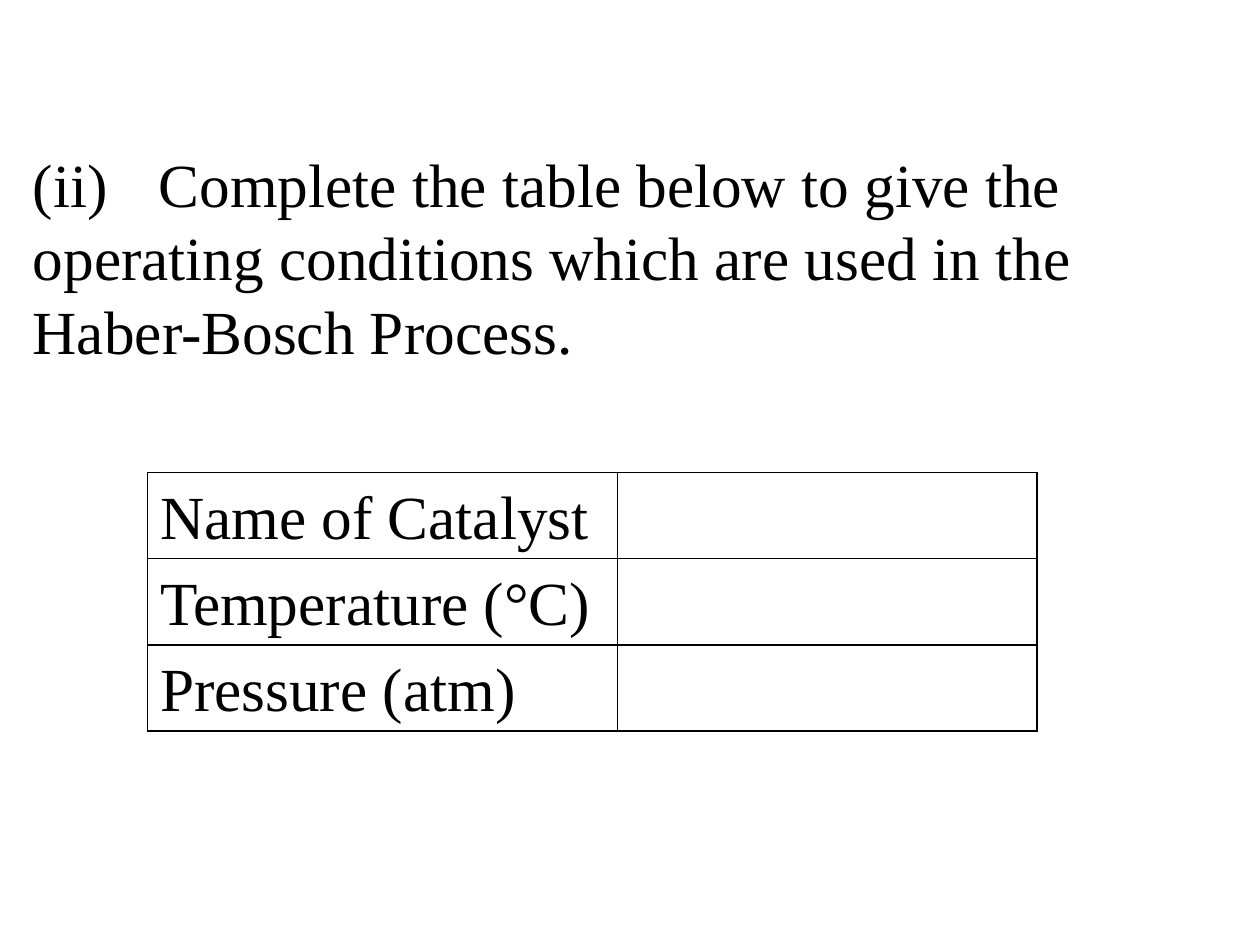
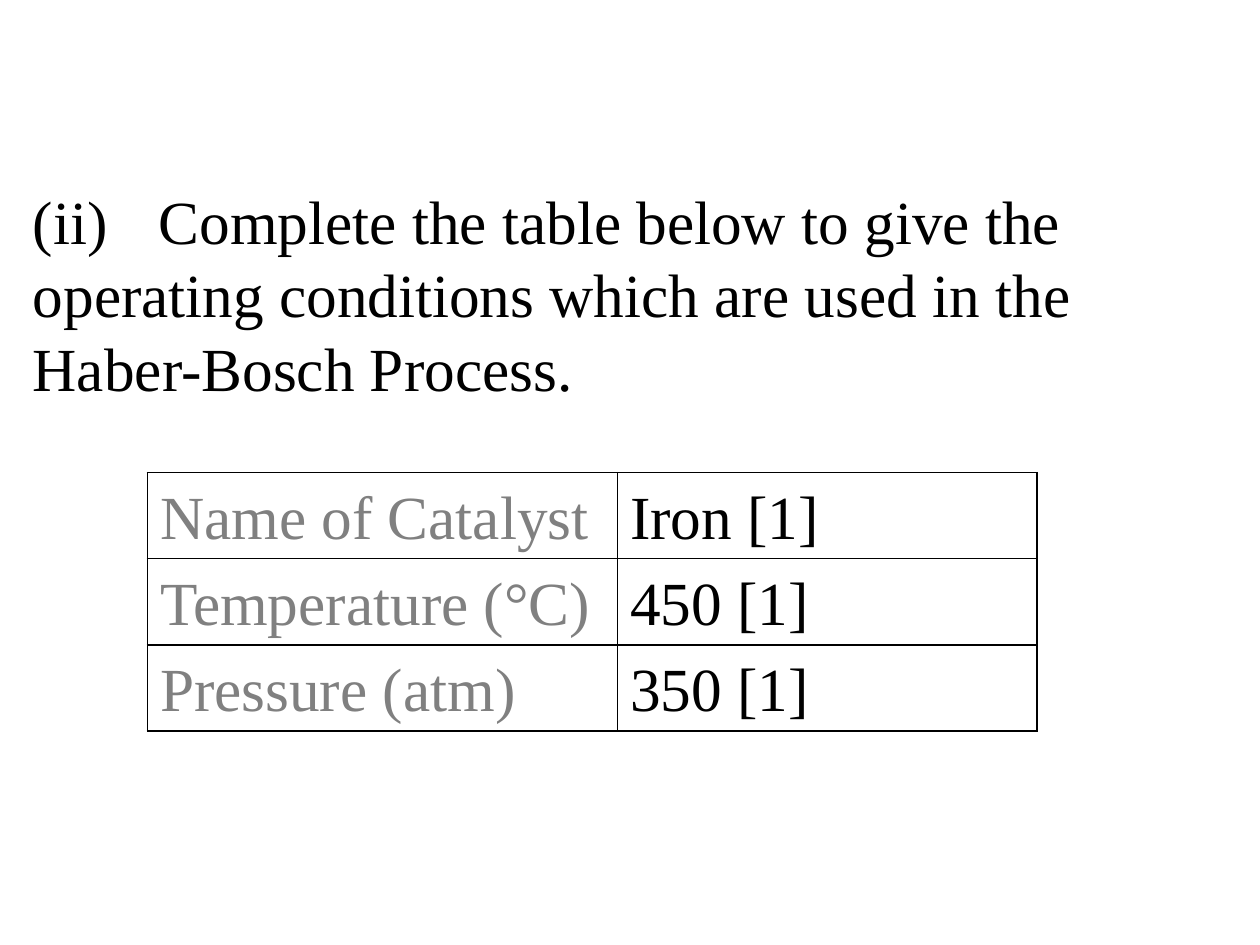
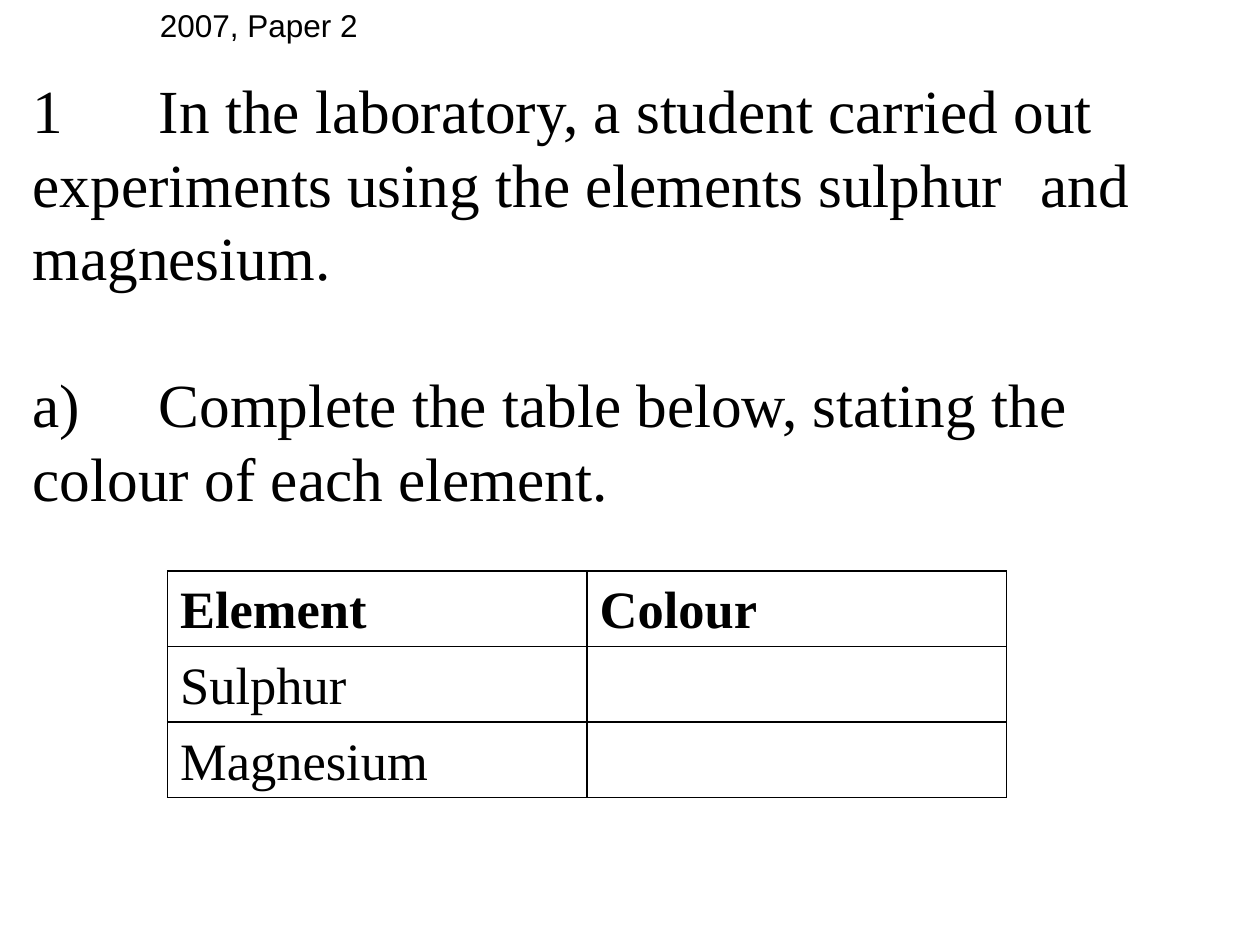
from lxml import etree
from pptx import Presentation
from pptx.dml.color import RGBColor
from pptx.enum import text
from pptx.oxml import ns
from pptx.util import Inches, Pt

COLORS = {"ink": "000000", "muted": "808080"}
SERIF, SANS = "Times New Roman", "Arial"
QUESTION_SIZE = 35
LINE_RATIO = 1.2
INSET = 0.05

CONDITIONS = ["Name of Catalyst", "Temperature (°C)", "Pressure (atm)"]
CONDITION_QUESTION = [
    "(ii)\tComplete the table below to give the \toperating conditions "
    "which are used in the \tHaber-Bosch Process."
]
ELEMENT_QUESTION = [
    "1\tIn the laboratory, a student carried out \texperiments using the "
    "elements sulphur \tand magnesium.",
    "a)\tComplete the table below, stating the \tcolour of each element.",
]


def format_runs(para, size, font=SERIF, color="ink", bold=False):
    for run in para.runs:
        run.font.name = font
        run.font.size = Pt(size)
        run.font.bold = bold
        run.font.color.rgb = RGBColor.from_string(COLORS[color])


def add_tab_stops(para):
    """One left tab stop at every inch across the question."""
    tabs = etree.SubElement(para._p.get_or_add_pPr(), ns.qn("a:tabLst"))
    for inch in range(1, 10):
        etree.SubElement(tabs, ns.qn("a:tab"), pos=str(Inches(inch)), algn="l")


def add_question(page, paragraphs, lines_above, lines_below):
    """Fill the title, keeping room for whole lines above and below it."""
    line = QUESTION_SIZE * LINE_RATIO
    title = page.shapes.title
    title.left, title.top = Inches(0.16), Inches(0.23)
    title.width, title.height = Inches(9.61), Inches(7.11)
    frame = title.text_frame
    frame.word_wrap = True
    frame.auto_size = text.MSO_AUTO_SIZE.NONE
    frame.vertical_anchor = text.MSO_ANCHOR.MIDDLE
    frame.margin_top = Inches(INSET) + Pt(line * lines_above)
    frame.margin_bottom = Inches(INSET) + Pt(line * lines_below)
    frame.text = "\n".join(paragraphs)
    for index, para in enumerate(frame.paragraphs):
        add_tab_stops(para)
        para.alignment = text.PP_ALIGN.LEFT
        para.line_spacing = Pt(line)
        para.space_before = Pt(line if index else 0)
        format_runs(para, QUESTION_SIZE)


def add_borders(cell):
    properties = cell._tc.get_or_add_tcPr()
    for position, side in enumerate(("lnL", "lnR", "lnT", "lnB")):
        border = etree.Element(ns.qn(f"a:{side}"), w=str(Pt(1)))
        fill = etree.SubElement(border, ns.qn("a:solidFill"))
        etree.SubElement(fill, ns.qn("a:srgbClr"), val=COLORS["ink"])
        properties.insert(position, border)


def add_grid(page, rows, place, widths, row_height, size,
             label_color="ink", header=False):
    left, top = place
    table = page.shapes.add_table(
        len(rows), len(widths), Inches(left), Inches(top),
        Inches(sum(widths)), Inches(row_height * len(rows))).table
    table.first_row = header
    table.horz_banding = False
    for column, width in zip(table.columns, widths):
        column.width = Inches(width)
    for row_index, values in enumerate(rows):
        table.rows[row_index].height = Inches(row_height)
        for column_index, value in enumerate(values):
            cell = table.cell(row_index, column_index)
            cell.fill.background()
            add_borders(cell)
            if not value:
                continue
            cell.text_frame.text = value
            para = cell.text_frame.paragraphs[0]
            para.line_spacing = Pt(size * LINE_RATIO)
            color = "ink" if column_index else label_color
            format_runs(para, size, color=color,
                        bold=header and row_index == 0)


def add_conditions_page(deck, answers, lines_below, label_color):
    page = deck.slides.add_slide(deck.slide_layouts[5])
    add_question(page, CONDITION_QUESTION, 0, lines_below)
    add_grid(page, list(zip(CONDITIONS, answers)), (1.17, 3.75),
             (3.73, 3.33), 0.68, QUESTION_SIZE, label_color)


def add_elements_page(deck):
    page = deck.slides.add_slide(deck.slide_layouts[5])
    add_question(page, ELEMENT_QUESTION, 1, 6)
    rows = [("Element", "Colour"), ("Sulphur", ""), ("Magnesium", "")]
    add_grid(page, rows, (1.33, 4.53), (3.33, 3.33), 0.6, 30, header=True)

    # Exam paper label
    box = page.shapes.add_textbox(
        Inches(1.17), Inches(0), Inches(3.98), Inches(0.4))
    box.text_frame.word_wrap = True
    box.text_frame.text = "2007, Paper 2"
    format_runs(box.text_frame.paragraphs[0], 18, font=SANS)


def main():
    deck = Presentation()
    deck.slide_width, deck.slide_height = Inches(10), Inches(7.5)

    # Question, then the same question with its answers
    add_conditions_page(deck, ["", "", ""], 6, "ink")
    add_conditions_page(deck, ["Iron [1]", "450 [1]", "350 [1]"], 5, "muted")

    add_elements_page(deck)
    deck.save("out.pptx")


if __name__ == "__main__":
    main()
